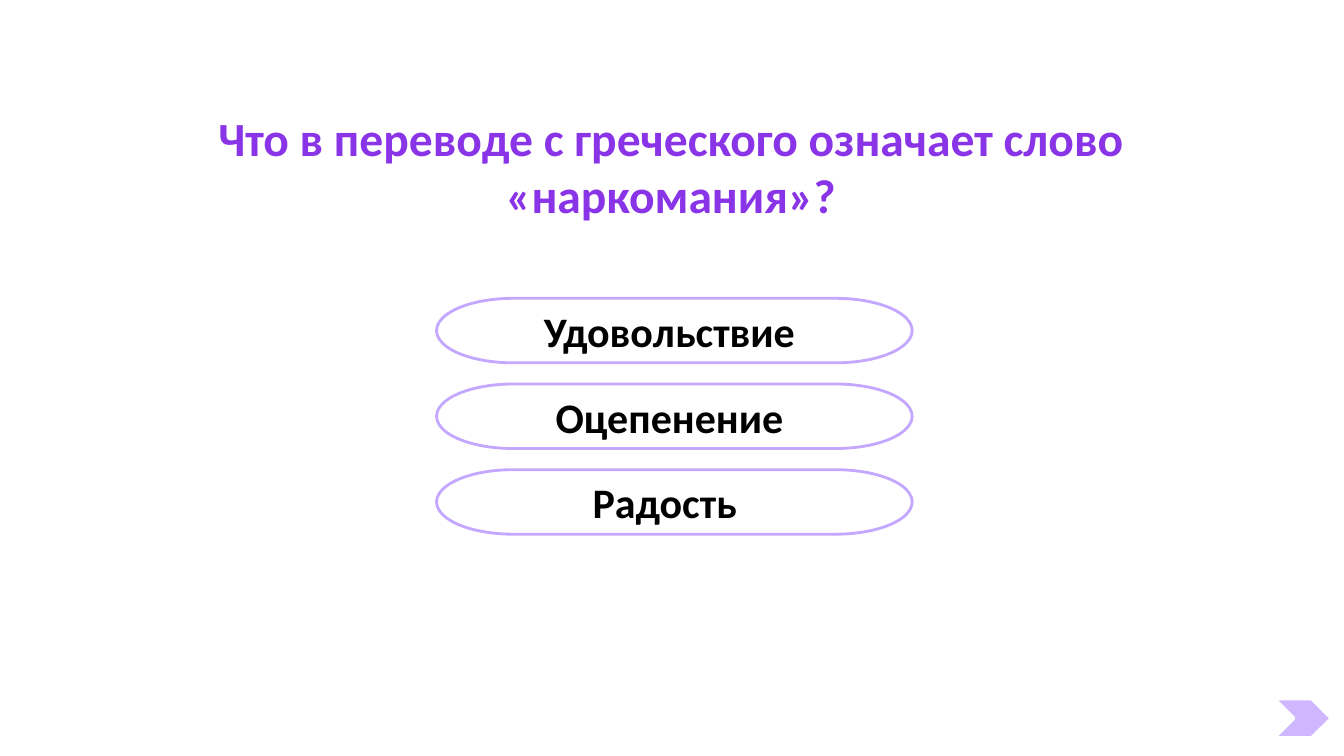
from pptx import Presentation
from pptx.dml.color import RGBColor
from pptx.enum.shapes import MSO_SHAPE as Preset
from pptx.enum.text import MSO_ANCHOR as Anchor, MSO_AUTO_SIZE as AutoSize, PP_ALIGN as Align
from pptx.util import Pt

FONT = "Calibri"
VIOLET = RGBColor(0x8A, 0x34, 0xE8)
LILAC = RGBColor(0xC4, 0xA7, 0xFF)
PALE_LILAC = RGBColor(0xCF, 0xB7, 0xFF)
WHITE = RGBColor(0xFF, 0xFF, 0xFF)
BLACK = RGBColor(0x00, 0x00, 0x00)

QUESTION = "Что в переводе с греческого означает слово «наркомания»?"
ANSWERS = [("Удовольствие", 14), ("Оцепенение", 14), ("Радость", 20.8)]
FIRST_ANSWER_TOP = 213.1
ANSWER_PITCH = 61.2


def write_centred(frame, text, size, color):
    paragraph = frame.paragraphs[0]
    paragraph.alignment = Align.CENTER
    run = paragraph.add_run()
    run.text = text
    run.font.name = FONT
    run.font.size = Pt(size)
    run.font.bold = True
    run.font.color.rgb = color


def add_outlined(slide, preset, left, top, width, height, line_color, line_width):
    outlined = slide.shapes.add_shape(preset, Pt(left), Pt(top), Pt(width), Pt(height))
    outlined.shadow.inherit = False
    outlined.line.color.rgb = line_color
    outlined.line.width = Pt(line_width)
    return outlined


def add_question(slide):
    question = slide.shapes.title
    question.left, question.top = Pt(124.6), Pt(74.2)
    question.width, question.height = Pt(709.2), Pt(90)
    frame = question.text_frame
    frame.word_wrap = True
    frame.auto_size = AutoSize.SHAPE_TO_FIT_TEXT
    frame.vertical_anchor = Anchor.TOP
    write_centred(frame, QUESTION, 34, VIOLET)


def add_answer(slide, text, top, right_inset):
    answer = add_outlined(slide, Preset.FLOWCHART_TERMINATOR, 311.8, top, 339.8, 46.1, LILAC, 2)
    answer.fill.background()
    frame = answer.text_frame
    frame.vertical_anchor = Anchor.MIDDLE
    frame.margin_right = Pt(right_inset)
    write_centred(frame, text, 30, BLACK)


def add_next_arrow(slide):
    next_arrow = add_outlined(slide, Preset.CHEVRON, 910.1, 499, 41, 28.1, WHITE, 2.5)
    next_arrow.fill.solid()
    next_arrow.fill.fore_color.rgb = PALE_LILAC


def main():
    deck = Presentation()
    deck.slide_width, deck.slide_height = Pt(960), Pt(540)
    slide = deck.slides.add_slide(deck.slide_layouts.get_by_name("Title Only"))
    add_next_arrow(slide)
    add_question(slide)
    for index, (text, right_inset) in enumerate(ANSWERS):
        add_answer(slide, text, FIRST_ANSWER_TOP + index * ANSWER_PITCH, right_inset)
    deck.save("out.pptx")


if __name__ == "__main__":
    main()
